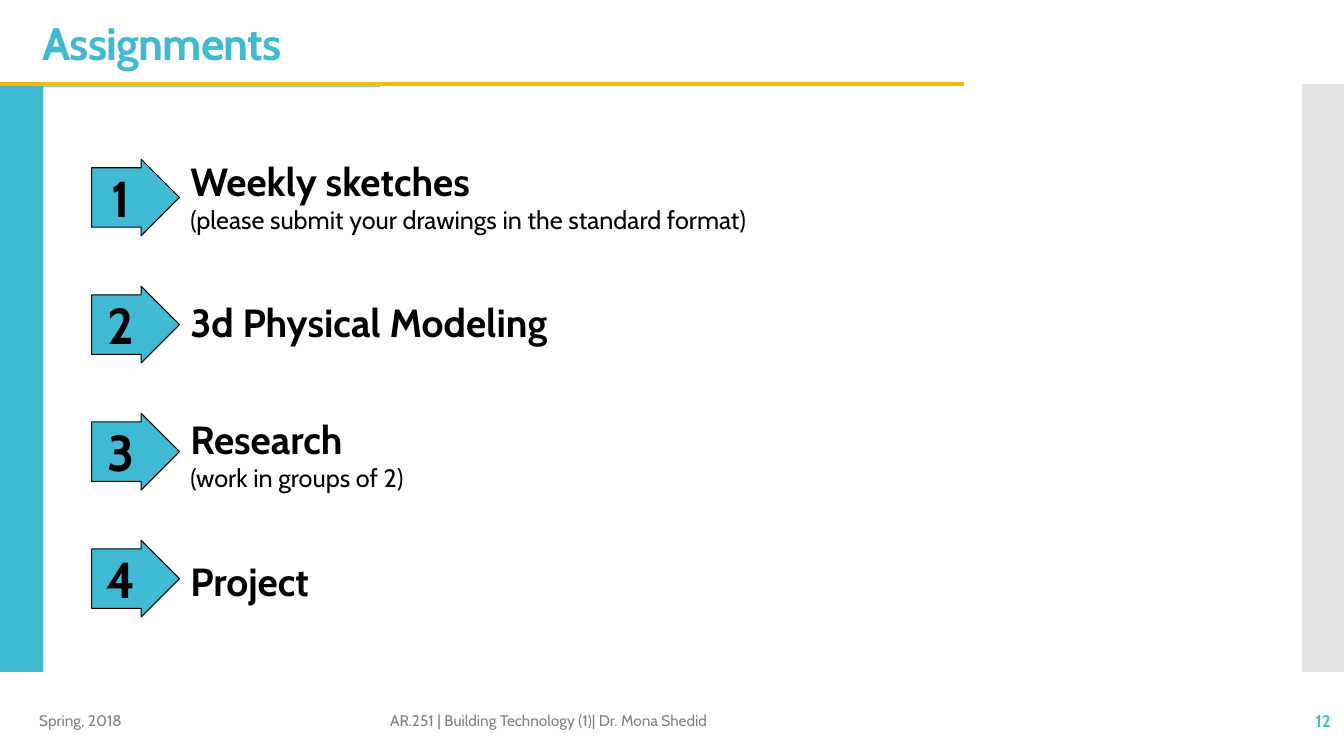
from dataclasses import dataclass

from lxml import etree
from pptx import Presentation
from pptx import util as u
from pptx.dml.color import RGBColor
from pptx.enum import shapes, text
from pptx.oxml import ns

COLUMNS, ROWS = 64, 36
CELL = u.Pt(15)


@dataclass(frozen=True)
class Theme:
    font: str = "Cabin"
    teal: str = "40BAD2"
    gold: str = "FAB900"
    silver: str = "C8C8C8"
    gray: str = "808080"
    black: str = "000000"
    white: str = "FFFFFF"
    title_size: float = 32.4
    number_size: float = 36
    heading_size: float = 28
    note_size: float = 18
    page_size: float = 12
    footer_size: float = 11


THEME = Theme()

ASSIGNMENTS = [
    ("Weekly sketches", 7.25, "(please submit your drawings in the standard format)"),
    ("3d Physical Modeling", 13.97, None),
    ("Research", 19.54, "(work in groups of 2)"),
    ("Project", 26.3, None),
]


def cells(*counts):
    return [round(count * CELL) for count in counts]


def write(frame, words, size, color=THEME.black, bold=False, align="LEFT",
          anchor="TOP", wrap=True, line_spacing=None, tracking=None):
    frame.word_wrap = wrap
    frame.vertical_anchor = getattr(text.MSO_ANCHOR, anchor)
    para = frame.paragraphs[0]
    para.alignment = getattr(text.PP_ALIGN, align)
    para.line_spacing = line_spacing
    span = para.add_run()
    span.text = words
    span.font.name = THEME.font
    span.font.size = u.Pt(size)
    span.font.bold = bold
    span.font.color.rgb = RGBColor.from_string(color)
    if tracking:
        span.font._element.set("spc", str(tracking))


def add_text(page, area, words, size, **style):
    box = page.shapes.add_textbox(*cells(*area))
    write(box.text_frame, words, size, **style)


def add_block(page, area, fill, kind="RECTANGLE", line=None, opacity=None):
    block = page.shapes.add_shape(getattr(shapes.MSO_SHAPE, kind), *cells(*area))
    block.shadow.inherit = False
    block.fill.solid()
    block.fill.fore_color.rgb = RGBColor.from_string(fill)
    if line:
        block.line.color.rgb = RGBColor.from_string(line)
        block.line.width = u.Pt(0.75)
    else:
        block.line.fill.background()
    if opacity:
        color = block.fill._xPr.find(".//" + ns.qn("a:srgbClr"))
        etree.SubElement(color, ns.qn("a:alpha"), val=str(opacity * 1000))
    return block


def add_rule(page, start, end, color, width):
    rule = page.shapes.add_connector(
        shapes.MSO_CONNECTOR.STRAIGHT, *cells(*start, *end))
    rule.line.color.rgb = RGBColor.from_string(color)
    rule.line.width = u.Pt(width)
    etree.SubElement(rule._element.spPr, ns.qn("a:effectLst"))


def add_frame(page):
    add_block(page, (0, 4, 18.1, 28), THEME.teal)
    add_block(page, (62, 4, 2, 28), THEME.silver, opacity=50)
    add_rule(page, (0, 4), (45.9, 4), THEME.gold, 3)
    add_block(page, (2.06, 4.13, 17.38, 28), THEME.white)


def add_footer(page):
    top, height = 33.36, 1.92
    add_text(page, (55.82, top, 8.02, height), "12", THEME.page_size,
             color=THEME.teal, bold=True, align="RIGHT", anchor="MIDDLE")
    for left, width, words in [
        (1.39, 14.4, "Spring, 2018"),
        (18.1, 36.24, "AR.251 | Building Technology (1)| Dr. Mona Shedid"),
    ]:
        add_text(page, (left, top, width, height), words, THEME.footer_size,
                 color=THEME.gray, anchor="MIDDLE")


def add_assignment(page, index, heading, heading_top, note):
    arrow = add_block(page, (4.37, 7.58 + 6.05 * index, 4.18, 3.65), THEME.teal,
                      kind="RIGHT_ARROW", line=THEME.black)
    arrow.adjustments[0] = 0.776
    arrow.adjustments[1] = 0.5
    write(arrow.text_frame, str(index + 1), THEME.number_size, bold=True,
          align="CENTER", anchor="MIDDLE", wrap=False)
    add_text(page, (8.59, heading_top, 23.86, 2.74), heading,
             THEME.heading_size, bold=True)
    if note:
        add_text(page, (8.59, heading_top + 2.25, 37.49, 2.11), note, THEME.note_size)


def main():
    deck = Presentation()
    deck.slide_width, deck.slide_height = cells(COLUMNS, ROWS)
    page = deck.slides.add_slide(deck.slide_layouts[6])
    add_frame(page)
    add_text(page, (1.54, 0.82, 21.22, 2.74), "Assignments", THEME.title_size,
             color=THEME.teal, bold=True, anchor="MIDDLE", line_spacing=0.9,
             tracking=-60)
    add_footer(page)
    for index, assignment in enumerate(ASSIGNMENTS):
        add_assignment(page, index, *assignment)
    deck.save("out.pptx")


if __name__ == "__main__":
    main()
